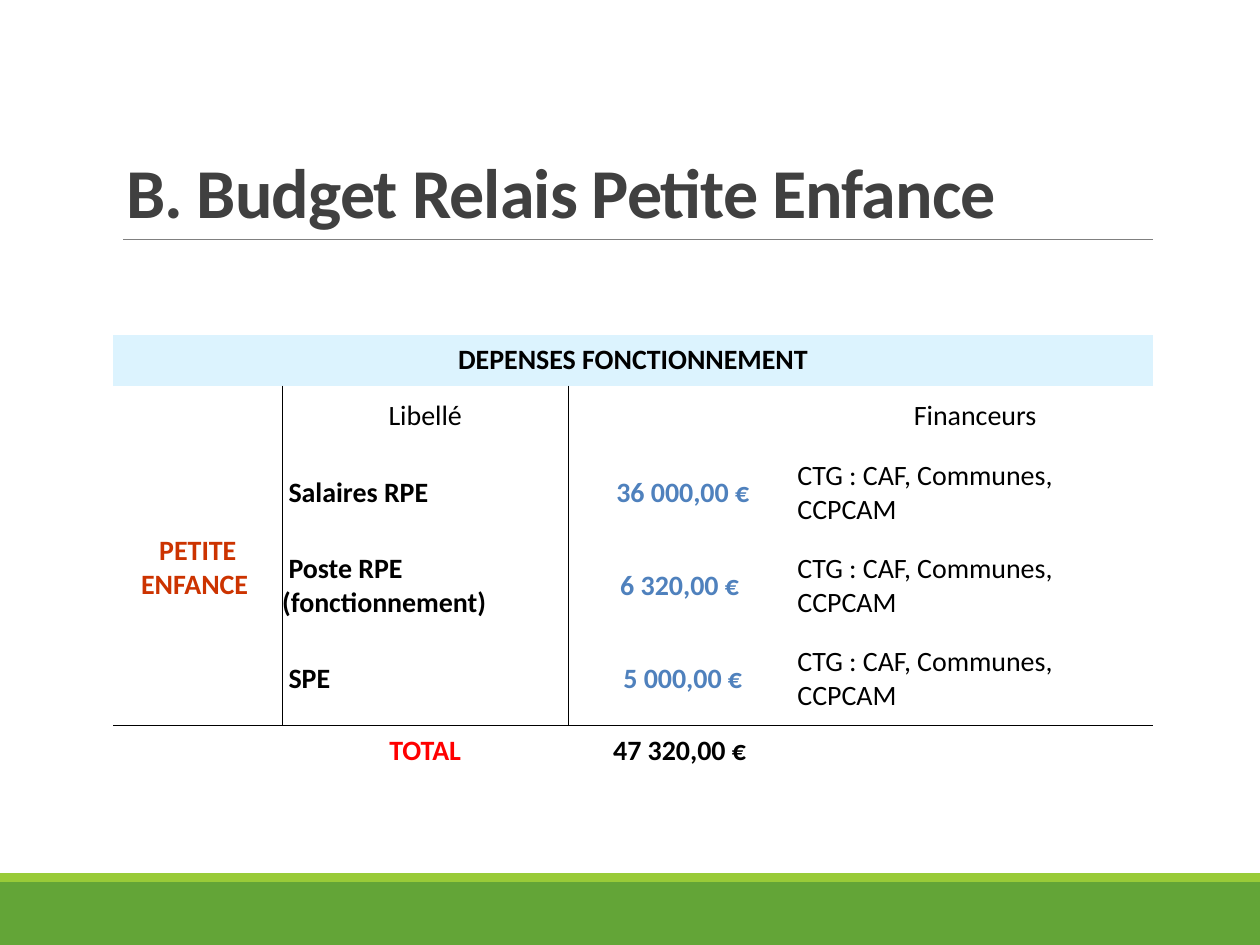
from lxml import etree
from pptx import Presentation, util as u
from pptx.dml.color import RGBColor
from pptx.enum import shapes, text
from pptx.oxml.ns import qn

GREEN = RGBColor(0x63, 0xA5, 0x37)
LIME = RGBColor(0x99, 0xCB, 0x38)
RULE_GREY = RGBColor(0x80, 0x80, 0x80)
TITLE_GREY = RGBColor(0x40, 0x40, 0x40)
PALE_BLUE = RGBColor(0xDC, 0xF3, 0xFE)
BLACK = RGBColor(0, 0, 0)
AMOUNT_BLUE = RGBColor(0x4F, 0x81, 0xBD)
RUST = RGBColor(0xCC, 0x33, 0x00)
RED = RGBColor(0xFF, 0, 0)
FONT = "Calibri"
NO_STYLE = "{2D5ABB26-0587-4C30-8999-92F81FD0307C}"
LEFT, WIDTH = u.Inches(0.9), u.Inches(8.25)

deck = Presentation()
deck.slide_width, deck.slide_height = u.Inches(10), u.Inches(7.5)
slide = deck.slides.add_slide(deck.slide_layouts[5])


def style_run(run, size, color, bold):
    run.font.name, run.font.size = FONT, u.Pt(size)
    run.font.color.rgb, run.font.bold = color, bold


def add_border(cell, side, points):
    line = etree.SubElement(cell._tc.get_or_add_tcPr(), qn(f"a:ln{side}"),
                            w=str(u.Pt(points)))
    fill = etree.SubElement(line, qn("a:solidFill"))
    etree.SubElement(fill, qn("a:srgbClr"), val=str(BLACK))


# Footer bands
for top, height, color in [(7, 0.5, GREEN), (6.93, 0.07, LIME)]:
    band = slide.shapes.add_shape(shapes.MSO_SHAPE.RECTANGLE, 0, u.Inches(top),
                                  deck.slide_width, u.Inches(height))
    band.shadow.inherit = False
    band.fill.solid()
    band.fill.fore_color.rgb = color
    band.line.fill.background()

# Title and the rule under it
title = slide.shapes.title
title.left, title.top = LEFT, u.Inches(0.31)
title.width, title.height = WIDTH, u.Inches(1.59)
frame = title.text_frame
frame.text = "B. Budget Relais Petite Enfance"
frame.auto_size = text.MSO_AUTO_SIZE.NONE
frame.vertical_anchor = text.MSO_ANCHOR.BOTTOM
heading = frame.paragraphs[0]
heading.alignment = text.PP_ALIGN.LEFT
heading.line_spacing, heading.space_after = 0.85, u.Pt(6)
style_run(heading.runs[0], 40, TITLE_GREY, True)
heading.runs[0].font._element.set("spc", "-50")

rule = slide.shapes.add_connector(shapes.MSO_CONNECTOR.STRAIGHT, u.Inches(0.98),
                                  u.Inches(1.9), LEFT + WIDTH, u.Inches(1.9))
rule.line.color.rgb, rule.line.width = RULE_GREY, u.Pt(0.5)
etree.SubElement(rule._element.spPr, qn("a:effectLst"))

# Budget table: contents by row
FUNDERS = "CTG : CAF, Communes, CCPCAM"
rows = [
    ["DEPENSES FONCTIONNEMENT", "", "", ""],
    ["", "Libellé", "", "Financeurs"],
    ["PETITE ENFANCE ", " Salaires RPE", " 36 000,00 € ", FUNDERS],
    ["", " Poste RPE (fonctionnement)", "6 320,00 € ", FUNDERS],
    ["", " SPE", " 5 000,00 € ", FUNDERS],
    ["", "TOTAL", "47 320,00 € ", ""],
]
col_widths = [1.34, 2.27, 1.82, 2.82]
row_heights = [0.4, 0.48, 0.74, 0.74, 0.74, 0.4]
HEADER, LABELS, FIRST, LAST, TOTAL = 0, 1, 2, 4, 5
special_colors = {(FIRST, 0): RUST, (TOTAL, 1): RED}

budget = slide.shapes.add_table(len(rows), len(col_widths), LEFT, u.Inches(2.66),
                                WIDTH, u.Inches(sum(row_heights))).table
budget.first_row = budget.horz_banding = False
budget._tbl.tblPr.find(qn("a:tableStyleId")).text = NO_STYLE
for column, width in zip(budget.columns, col_widths):
    column.width = u.Inches(width)
for row, height in zip(budget.rows, row_heights):
    row.height = u.Inches(height)

for r, row in enumerate(rows):
    for c, content in enumerate(row):
        cell = budget.cell(r, c)
        cell.margin_left = cell.margin_right = 0
        cell.margin_top = cell.margin_bottom = 0
        cell.vertical_anchor = text.MSO_ANCHOR.MIDDLE

        # Borders: beside the category column and above the total
        if LABELS <= r <= LAST and c == 1:
            add_border(cell, "L", 0.5)
        if LABELS <= r <= LAST and c == 0:
            add_border(cell, "R", 0.5)
        if r == TOTAL:
            add_border(cell, "T", 1)
        if r == LAST or (r, c) == (FIRST, 0):
            add_border(cell, "B", 1)

        if r == HEADER:
            cell.fill.solid()
            cell.fill.fore_color.rgb = PALE_BLUE
        else:
            cell.fill.background()

        if content:
            cell.text_frame.text = content
            entry = cell.text_frame.paragraphs[0]
            left_aligned = FIRST <= r <= LAST and c in (1, 3)
            entry.alignment = text.PP_ALIGN.LEFT if left_aligned else text.PP_ALIGN.CENTER
            amount = FIRST <= r <= LAST and c == 2
            color = special_colors.get((r, c), AMOUNT_BLUE if amount else BLACK)
            style_run(entry.runs[0], 16, color, r != LABELS and content != FUNDERS)

# Merged header and category; the category sits a little above the middle
budget.cell(HEADER, 0).merge(budget.cell(HEADER, 3))
category = budget.cell(FIRST, 0)
category.merge(budget.cell(LAST, 0))
category.margin_bottom = u.Inches(0.28)

deck.save("out.pptx")
